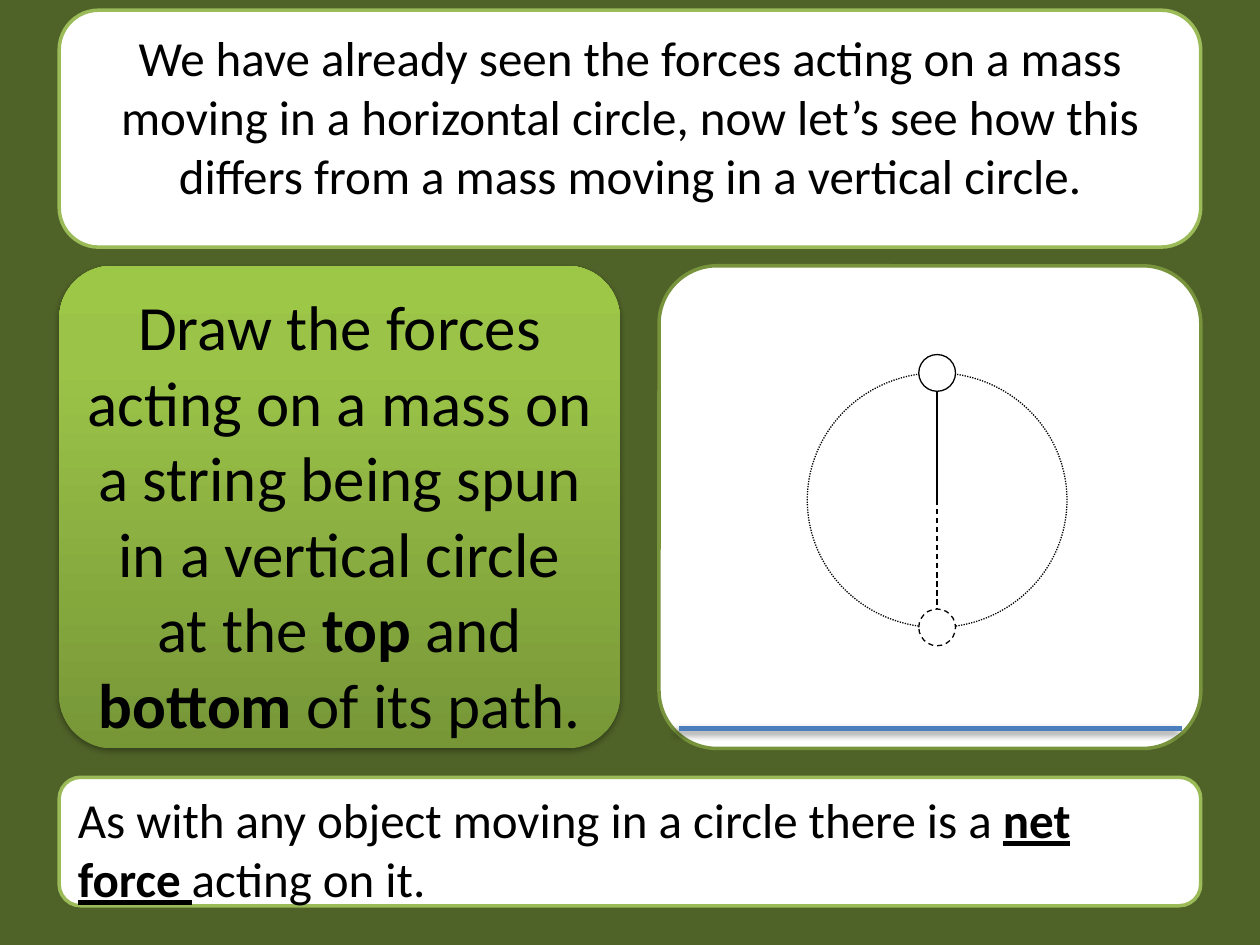
from dataclasses import dataclass
from typing import Optional

from lxml.etree import SubElement
from pptx import Presentation
from pptx.dml.color import RGBColor
from pptx.enum.dml import MSO_LINE_DASH_STYLE as Dash
from pptx.enum.shapes import MSO_CONNECTOR as Link, MSO_SHAPE as Shape
from pptx.enum.text import MSO_ANCHOR as Anchor, PP_ALIGN as Align
from pptx.oxml.ns import qn
from pptx.util import Pt

DARK_GREEN = RGBColor(0x4F, 0x62, 0x28)
LIGHT_GREEN = RGBColor(0x9B, 0xBB, 0x59)
MID_GREEN = RGBColor(0x77, 0x93, 0x3C)
BLUE = RGBColor(0x4B, 0x7E, 0xBC)
WHITE = RGBColor(0xFF, 0xFF, 0xFF)
BLACK = RGBColor(0x00, 0x00, 0x00)
GRADIENT = (
    (0, RGBColor(0x77, 0x97, 0x37)),
    (80, RGBColor(0x9B, 0xC3, 0x48)),
    (100, RGBColor(0x9D, 0xC7, 0x46)),
)

MARGIN, PANEL_WIDTH = 33.85, 652.3
ROW_TOP, ROW_HEIGHT = 151.9, 275.8
CENTRE_X, CENTRE_Y = 535.5, 285.8
ORBIT_X, ORBIT_Y, BALL = 74.2, 72.7, 10.5


@dataclass(frozen=True)
class Panel:
    left: float
    top: float
    width: float
    height: float
    corner: float = 0.16667
    border: Optional[RGBColor] = LIGHT_GREEN


@dataclass(frozen=True)
class Shadow:
    opacity: int
    blur: float
    distance: float
    angle: int


@dataclass(frozen=True)
class Half:
    direction: int
    dash: Optional[Dash] = None


def add_effects(shape, shadow: Optional[Shadow] = None) -> None:
    """Replace the theme effects of a shape by the given shadow, or by none."""
    effects = SubElement(shape._element.spPr, qn("a:effectLst"))
    if shadow:
        outer = SubElement(
            effects, qn("a:outerShdw"), blurRad=str(Pt(shadow.blur)),
            dist=str(Pt(shadow.distance)), dir=str(shadow.angle * 60000),
            algn="ctr", rotWithShape="0")
        colour = SubElement(outer, qn("a:srgbClr"), val=str(BLACK))
        SubElement(colour, qn("a:alpha"), val=str(shadow.opacity * 1000))


def set_line(shape, colour: RGBColor, weight: float, dash: Optional[Dash] = None) -> None:
    """Set colour, weight and dash of a line."""
    shape.line.color.rgb = colour
    shape.line.width = Pt(weight)
    if dash:
        shape.line.dash_style = dash


def add_panel(shapes, panel: Panel, shadow: Optional[Shadow] = None):
    """Draw a white rounded panel."""
    box = shapes.add_shape(Shape.ROUNDED_RECTANGLE, Pt(panel.left), Pt(panel.top),
                           Pt(panel.width), Pt(panel.height))
    box.adjustments[0] = panel.corner
    box.fill.solid()
    box.fill.fore_color.rgb = WHITE
    if panel.border is None:
        box.line.fill.background()
    else:
        set_line(box, panel.border, 2)
    add_effects(box, shadow)
    return box


def fill_gradient(box) -> None:
    """Fill a box with the green gradient, rising from its bottom edge."""
    box.fill.gradient()
    box.fill.gradient_angle = 90
    stops = box._element.spPr.find(qn("a:gradFill")).find(qn("a:gsLst"))
    for stop in list(stops):
        stops.remove(stop)
    for position, colour in GRADIENT:
        stop = SubElement(stops, qn("a:gs"), pos=str(position * 1000))
        SubElement(stop, qn("a:srgbClr"), val=str(colour))


def write(box, *spans: str, size: float, align: Align = Align.CENTER,
          strong: tuple[str, ...] = (), underline: bool = False) -> None:
    """Write one paragraph, with the strong spans bold and maybe underlined."""
    frame = box.text_frame
    frame.word_wrap = True
    frame.vertical_anchor = Anchor.TOP
    para = frame.paragraphs[0]
    para.alignment = align
    para.space_after = Pt(10)
    for text in spans:
        span = para.add_run()
        span.text = text
        span.font.name = "Calibri"
        span.font.size = Pt(size)
        span.font.color.rgb = BLACK
        span.font.bold = text in strong
        span.font.underline = underline and text in strong


def add_ellipse(shapes, x: float, y: float, radius_x: float, radius_y: float,
                dash: Optional[Dash] = None) -> None:
    """Draw a white ellipse around a centre."""
    ellipse = shapes.add_shape(Shape.OVAL, Pt(x - radius_x), Pt(y - radius_y),
                               Pt(2 * radius_x), Pt(2 * radius_y))
    ellipse.fill.solid()
    ellipse.fill.fore_color.rgb = WHITE
    set_line(ellipse, BLACK, 0.75, dash)
    add_effects(ellipse)


def add_line(shapes, start: tuple[float, float], end: tuple[float, float],
             colour: RGBColor, weight: float, dash: Optional[Dash] = None,
             shadow: Optional[Shadow] = None) -> None:
    """Draw a straight line between two points."""
    line = shapes.add_connector(Link.STRAIGHT, *map(Pt, start + end))
    set_line(line, colour, weight, dash)
    add_effects(line, shadow)


def add_orbit(page) -> None:
    """Draw the vertical circle with the mass at its top and bottom."""
    shapes = page.shapes.add_group_shape().shapes
    add_ellipse(shapes, CENTRE_X, CENTRE_Y, ORBIT_X, ORBIT_Y, Dash.ROUND_DOT)
    for half in (Half(-1), Half(1, Dash.DASH)):
        ball_y = CENTRE_Y + half.direction * ORBIT_Y
        add_line(shapes, (CENTRE_X, CENTRE_Y), (CENTRE_X, ball_y), BLACK, 0.75, half.dash)
        add_ellipse(shapes, CENTRE_X, ball_y, BALL, BALL, half.dash)


def main() -> None:
    """Build the slide and save it."""
    deck = Presentation()
    deck.slide_width, deck.slide_height = Pt(720), Pt(540)
    page = deck.slides.add_slide(deck.slide_layouts[6])
    page.background.fill.solid()
    page.background.fill.fore_color.rgb = DARK_GREEN

    add_panel(page.shapes, Panel(376.6, ROW_TOP, 309.6, ROW_HEIGHT, 0.12, MID_GREEN))

    intro = add_panel(page.shapes, Panel(MARGIN, 5.8, PANEL_WIDTH, 135.4))
    write(intro, "We have already seen the forces acting on a mass moving in a "
          "horizontal circle, now let’s see how this differs from a mass moving "
          "in a vertical circle.", size=28)

    task = add_panel(page.shapes, Panel(MARGIN, ROW_TOP, 320.4, ROW_HEIGHT, 0.11, None),
                     Shadow(35, 3.1, 1.8, 90))
    fill_gradient(task)
    write(task, "Draw the forces acting on a mass on a string being spun in a "
          "vertical circle at the ", "top", " and ", "bottom", " of its path.",
          size=36, strong=("top", "bottom"))

    add_orbit(page)

    remark = add_panel(page.shapes, Panel(MARGIN, 444.2, PANEL_WIDTH, 73.4))
    write(remark, "As with any object moving in a circle there is a ", "net force ",
          "acting on it.", size=28, align=Align.LEFT, strong=("net force ",),
          underline=True)

    add_line(page.shapes, (388, 416.2), (675.2, 416.2), BLUE, 3,
             shadow=Shadow(40, 4, 3, 135))
    deck.save("out.pptx")


if __name__ == "__main__":
    main()
